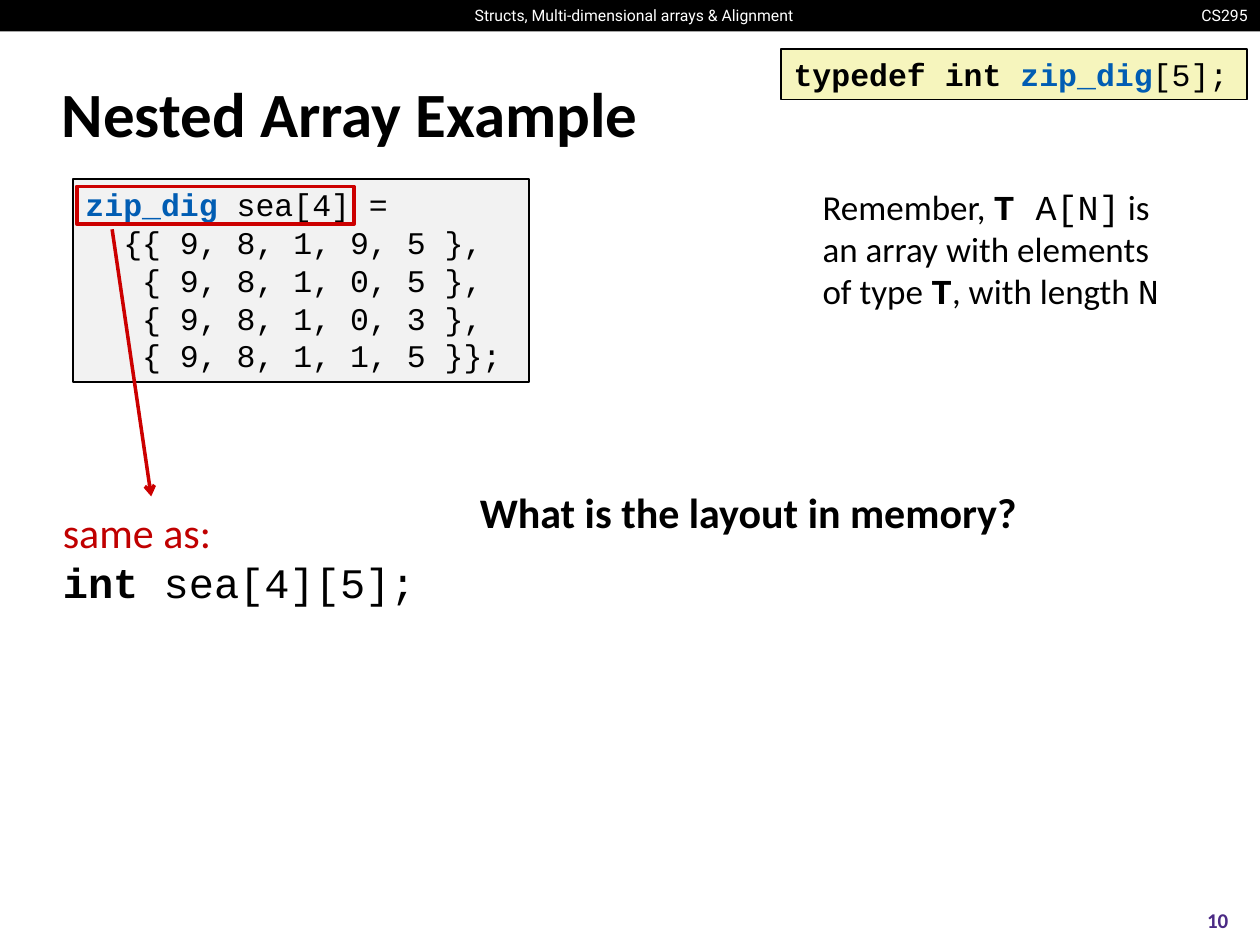
from pptx import Presentation
from pptx.dml.color import RGBColor
from pptx.enum.shapes import MSO_CONNECTOR as CONN, MSO_SHAPE as SHAPE
from pptx.enum.text import MSO_ANCHOR as ANCHOR, PP_ALIGN as ALIGN
from pptx.oxml.ns import qn
from pptx.util import Inches, Pt
from lxml import etree

COLORS = {
    "black": "000000", "white": "FFFFFF", "type": "015DB3", "code": "F2F2F2",
    "typedef": "F6F5BD", "mark": "CC0000", "same": "C00000", "number": "4B2A85",
}
SANS, MONO, HEAD = "Calibri", "Courier New", "Roboto"
CHAR_WIDTH = 0.15


def rgb(name):
    return RGBColor.from_string(COLORS[name])


def set_attrs(obj, **values):
    for name, value in values.items():
        setattr(obj, name, value)


def add_runs(p, runs, size):
    for text, font, bold, color in runs:
        r = p.add_run()
        r.text = text
        set_attrs(r.font, name=font, size=Pt(size), bold=bold)
        r.font.color.rgb = rgb(color)


def fill_text(sp, lines, size, align=ALIGN.LEFT, anchor=ANCHOR.TOP, wrap=True):
    tf = sp.text_frame
    set_attrs(tf, word_wrap=wrap, vertical_anchor=anchor,
              margin_left=Inches(0.1), margin_right=Inches(0.1),
              margin_top=Inches(0.05), margin_bottom=Inches(0.05))
    for i, runs in enumerate(lines):
        p = tf.add_paragraph() if i else tf.paragraphs[0]
        p.alignment = align
        add_runs(p, runs, size)
    return tf


def add_text(s, box, lines, size, **layout):
    sp = s.shapes.add_textbox(*map(Inches, box))
    return fill_text(sp, lines, size, **layout)


def add_box(s, box, fill=None, line=None, width=1):
    sp = s.shapes.add_shape(SHAPE.RECTANGLE, *map(Inches, box))
    sp.shadow.inherit = False
    if fill:
        sp.fill.solid()
        sp.fill.fore_color.rgb = rgb(fill)
    else:
        sp.fill.background()
    if line:
        sp.line.color.rgb = rgb(line)
        sp.line.width = Pt(width)
    else:
        sp.line.fill.background()
    return sp


def add_arrow(s, start, end):
    cn = s.shapes.add_connector(CONN.STRAIGHT, *map(Inches, start + end))
    cn.line.color.rgb = rgb("mark")
    cn.line.width = Pt(2)
    etree.SubElement(cn.line._get_or_add_ln(), qn("a:tailEnd"), type="arrow")
    etree.SubElement(cn._element.spPr, qn("a:effectLst"))


def header_bar(s, box):
    left, top, width, height = box
    add_box(s, box, "black")
    add_text(s, (left + 3.62, top, 2.82, height),
             [[("Structs, Multi-dimensional arrays & Alignment", HEAD, False, "white")]],
             9, align=ALIGN.CENTER, wrap=False)
    add_text(s, (left + width - 0.59, top, 0.59, height),
             [[("CS295", HEAD, False, "white")]], 9, align=ALIGN.RIGHT, wrap=False)


def title(s, box):
    sp = s.shapes.title
    left, top, width, height = map(Inches, box)
    set_attrs(sp, left=left, top=top, width=width, height=height)
    fill_text(sp, [[("Nested Array Example", SANS, True, "black")]], 36,
              anchor=ANCHOR.MIDDLE)


def array_code(s, box):
    rows = [(2, "{{ 9, 8, 1, 9, 5 },"), (3, "{ 9, 8, 1, 0, 5 },"),
            (3, "{ 9, 8, 1, 0, 3 },"), (3, "{ 9, 8, 1, 1, 5 }};")]
    lines = [[("zip_dig", MONO, True, "type"), (" sea[4] =", MONO, False, "black")]]
    lines += [[(text, MONO, False, "black")] for _, text in rows]
    tf = fill_text(add_box(s, box, "code", "black"), lines, 18)
    for p, (depth, _) in zip(tf.paragraphs[1:], rows):
        pPr = p._p.get_or_add_pPr()
        pPr.set("marL", str(Inches(depth * CHAR_WIDTH)))
        pPr.set("indent", "0")
    left, top = box[:2]
    add_box(s, (left + 0.03, top + 0.06, 2.2, 0.3), line="mark", width=2)
    add_arrow(s, (left + 0.31, top + 0.4), (left + 0.62, top + 2.52))


def reminder(s, box):
    add_text(s, box, [[
        ("Remember, ", SANS, False, "black"), ("T", MONO, True, "black"),
        (" A[N]", MONO, False, "black"),
        (" is an array with elements of type ", SANS, False, "black"),
        ("T", MONO, True, "black"), (", with length ", SANS, False, "black"),
        ("N", MONO, False, "black")]], 20)


def question(s, box):
    add_text(s, box, [[("What is the layout in memory?", SANS, True, "black")]],
             24, wrap=False)


def equivalent(s, box):
    add_text(s, box, [
        [("same as:", SANS, False, "same")],
        [("int", MONO, True, "black"), (" sea[4][5];", MONO, False, "black")],
    ], 24, wrap=False)


def typedef(s, box):
    fill_text(add_box(s, box, "typedef", "black"), [[
        ("typedef int ", MONO, True, "black"), ("zip_dig", MONO, True, "type"),
        ("[5];", MONO, False, "black")]], 18)


def slide_number(s, box):
    add_text(s, box, [[("10", SANS, True, "number")]], 12,
             align=ALIGN.CENTER, anchor=ANCHOR.MIDDLE)


def main():
    prs = Presentation()
    set_attrs(prs, slide_width=Inches(10), slide_height=Inches(7.5))
    s = prs.slides.add_slide(prs.slide_layouts[5])
    header_bar(s, (0, 0, 10, 0.25))
    title(s, (0.39, 0.48, 9.19, 0.83))
    slide_number(s, (9.33, 7.1, 0.67, 0.4))
    array_code(s, (0.58, 1.42, 3.62, 1.61))
    reminder(s, (6.43, 1.42, 2.97, 1.11))
    question(s, (3.71, 3.81, 4.5, 0.5))
    equivalent(s, (0.4, 3.97, 3.02, 0.91))
    typedef(s, (6.2, 0.39, 3.7, 0.4))
    prs.save("out.pptx")


if __name__ == "__main__":
    main()
